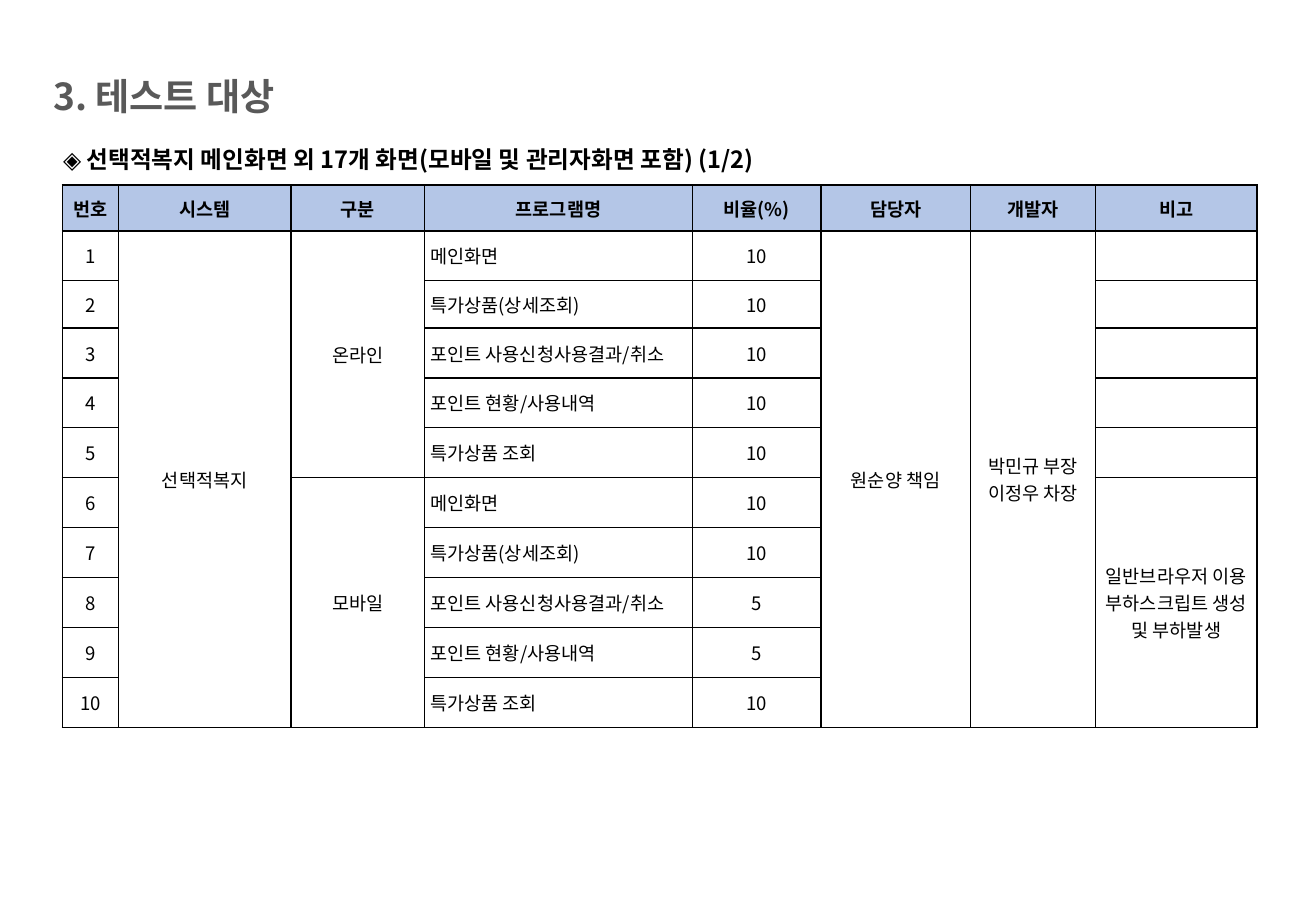
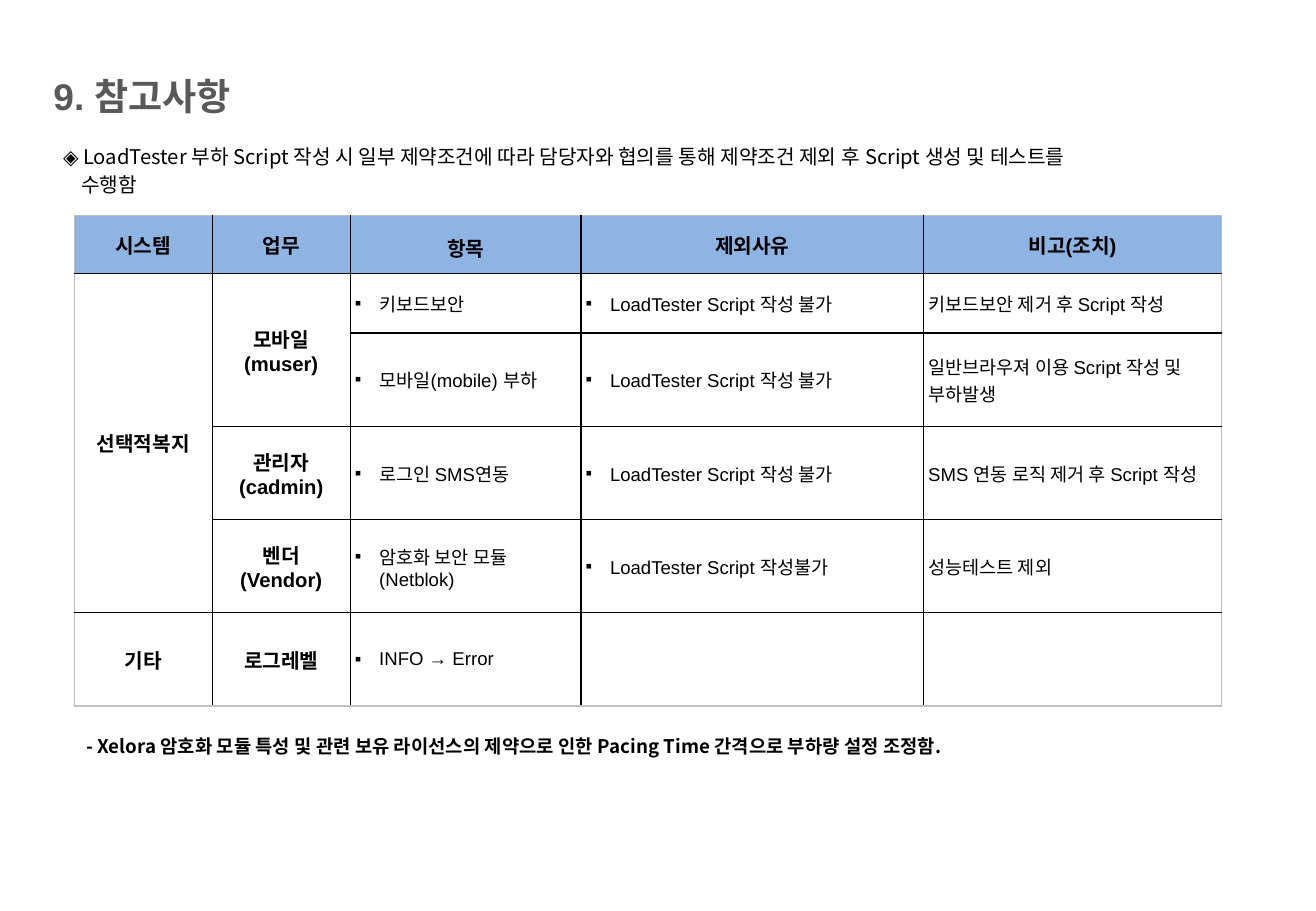
from lxml import etree
from pptx import Presentation
from pptx.dml.color import RGBColor
from pptx.enum.text import MSO_ANCHOR, MSO_AUTO_SIZE, PP_ALIGN
from pptx.oxml.ns import qn
from pptx.util import Pt

LEFT, CENTER = PP_ALIGN.LEFT, PP_ALIGN.CENTER
MIDDLE = MSO_ANCHOR.MIDDLE
GROW = MSO_AUTO_SIZE.SHAPE_TO_FIT_TEXT
KOREAN, ARIAL = "Noto Sans CJK KR", "Arial"
COLORS = {
    "text": "000000",
    "title": "595959",
    "white": "FFFFFF",
    "blue_light": "B4C6E7",
    "blue": "8EB4E3",
    "line": "000000",
    "frame": "BFBFBF",
}


def put(tf, text, size=11, font=KOREAN, color="text", bold=False, align=LEFT,
        spacing=None, hang=0, bullet=None):
    """Fill a text frame: one paragraph per line, **bold** between double stars."""
    tf.word_wrap = True
    for i, line in enumerate(text.split("\n")):
        p = tf.add_paragraph() if i else tf.paragraphs[0]
        p.alignment = align
        pPr = p._p.get_or_add_pPr()
        if hang:
            pPr.set("marL", str(Pt(hang)))
            pPr.set("indent", str(-Pt(hang)))
        if bullet:
            etree.SubElement(pPr, qn("a:buFont")).set("typeface", ARIAL)
            etree.SubElement(pPr, qn("a:buChar")).set("char", bullet)
        if spacing:
            p.line_spacing = spacing
        for j, part in enumerate(line.split("**")):
            if not part:
                continue
            r = p.add_run()
            r.text = part
            r.font.size = Pt(size)
            r.font.bold = bold or j % 2 == 1
            r.font.color.rgb = RGBColor.from_string(COLORS[color])
            r.font.name = font


def grid(s, left, top, cols, rows, merges, head, frame, inset):
    """Add a ruled table; merges lists (first row, column, last row)."""
    n, m = len(rows), len(cols)
    table = s.shapes.add_table(n, m, Pt(left), Pt(top), Pt(sum(cols)), Pt(sum(rows))).table
    table.first_row = table.horz_banding = False
    for column, width in zip(table.columns, cols):
        column.width = Pt(width)
    for row, height in zip(table.rows, rows):
        row.height = Pt(height)
    for i in range(n):
        for j in range(m):
            cell = table.cell(i, j)
            cell.vertical_anchor = MIDDLE
            cell.margin_left = cell.margin_right = Pt(inset)
            cell.margin_top = cell.margin_bottom = Pt(inset)
            tcPr = cell._tc.get_or_add_tcPr()
            outer = {"lnL": j == 0, "lnR": j == m - 1, "lnT": i == 0, "lnB": i == n - 1}
            for side, is_outer in outer.items():
                ln = etree.SubElement(tcPr, qn(f"a:{side}"), w=str(Pt(1)))
                fill = etree.SubElement(ln, qn("a:solidFill"))
                color = COLORS[frame if is_outer else "line"]
                etree.SubElement(fill, qn("a:srgbClr"), val=color)
            cell.fill.solid()
            cell.fill.fore_color.rgb = RGBColor.from_string(COLORS["white" if i else head])
    for first, col, last in merges:
        table.cell(first, col).merge(table.cell(last, col))
    return table


prs = Presentation()
prs.slide_width, prs.slide_height = Pt(780), Pt(540)

slides = []
for title, font in [("3. 테스트 대상", KOREAN), ("9. 참고사항", ARIAL)]:
    s = prs.slides.add_slide(prs.slide_layouts[6])
    sp = s.shapes.add_textbox(Pt(24.6), Pt(40), Pt(500), Pt(32.4))
    put(sp.text_frame, title, size=22, font=font, color="title", bold=True)
    slides.append(s)
targets, notes = slides

# Test targets
sp = targets.shapes.add_textbox(Pt(30.3), Pt(80), Pt(715), Pt(21))
put(sp.text_frame, "◈ 선택적복지 메인화면 외 17개 화면(모바일 및 관리자화면 포함) (1/2)",
    size=14, bold=True, spacing=1.15)

table = grid(targets, 37, 109.6,
             cols=[33.2, 102.4, 79.2, 158.6, 76.2, 88.7, 74.2, 95.6],
             rows=[27.4, 29.2, 28.2] + [29.6] * 8,
             merges=[(1, 1, 10), (1, 2, 5), (6, 2, 10), (1, 5, 10), (1, 6, 10), (6, 7, 10)],
             head="blue_light", frame="line", inset=0)
headers = ["번호", "시스템", "구분", "프로그램명", "비율(%)", "담당자", "개발자", "비고"]
for j, text in enumerate(headers):
    put(table.cell(0, j).text_frame, text, bold=True, align=CENTER)

programs = ["메인화면", "특가상품(상세조회)", "포인트 사용신청사용결과/취소",
            "포인트 현황/사용내역", "특가상품 조회"]
ratios = [10, 10, 10, 10, 10, 10, 10, 5, 5, 10]
centered = {
    (1, 1): "선택적복지",
    (1, 2): "온라인",
    (6, 2): "모바일",
    (1, 5): "원순양 책임",
    (1, 6): "박민규 부장\n이정우 차장",
    (6, 7): "일반브라우저 이용 부하스크립트 생성 및 부하발생",
}
for i, (program, ratio) in enumerate(zip(programs * 2, ratios), 1):
    centered[i, 0], centered[i, 4] = str(i), str(ratio)
    cell = table.cell(i, 3)
    cell.margin_left = Pt(3.2)
    put(cell.text_frame, program)
for (i, j), text in centered.items():
    put(table.cell(i, j).text_frame, text, align=CENTER)

# Notes
table = grid(notes, 44.1, 127.8,
             cols=[81.7, 81.8, 136.8, 203, 176.6],
             rows=[34.2, 35.4] + [55.3] * 4,
             merges=[(1, 0, 4), (1, 1, 2)],
             head="blue", frame="frame", inset=2.8)
for j, text in enumerate(["시스템", "업무", "항목", "제외사유", "비고(조치)"]):
    put(table.cell(0, j).text_frame, text, size=12, font=ARIAL, bold=True,
        align=CENTER, spacing=1.2 if text == "항목" else None)

rows = [
    ("선택적복지", "모바일\n(muser)", "키보드보안", "LoadTester Script 작성 불가",
     "키보드보안 제거 후 Script 작성"),
    ("", "", "모바일(mobile) 부하", "LoadTester Script 작성 불가",
     "일반브라우져 이용 Script 작성 및 부하발생"),
    ("", "관리자\n(cadmin)", "로그인 SMS연동", "LoadTester Script 작성 불가",
     "SMS 연동 로직 제거 후 Script 작성"),
    ("", "벤더\n(Vendor)", "암호화 보안 모듈 (Netblok)", "LoadTester Script 작성불가",
     "성능테스트 제외"),
    ("기타", "로그레벨", "INFO → Error", "", ""),
]
group = dict(size=12, bold=True, align=CENTER)
item = dict(hang=14.4, bullet="▪")
formats = [group, group, item, item, {}]
for i, row in enumerate(rows, 1):
    for j, (text, style) in enumerate(zip(row, formats)):
        if text:
            put(table.cell(i, j).text_frame, text, font=ARIAL, **style)

sp = notes.shapes.add_textbox(Pt(30.3), Pt(80), Pt(642), Pt(49.7))
put(sp.text_frame, "**◈ **LoadTester 부하 Script 작성 시 일부 제약조건에 따라 담당자와 협의를 통해 "
    "제약조건 제외 후 Script 생성 및 테스트를 수행함", size=12, spacing=1.15, hang=10.7)

sp = notes.shapes.add_textbox(Pt(44), Pt(418.6), Pt(646), Pt(33.8))
sp.text_frame.auto_size = GROW
sp.text_frame.vertical_anchor = MIDDLE
put(sp.text_frame, "- Xelora 암호화 모듈 특성 및 관련 보유 라이선스의 제약으로 인한 "
    "Pacing Time 간격으로 부하량 설정 조정함.", size=11.1, bold=True, spacing=2.0)

prs.save("out.pptx")
